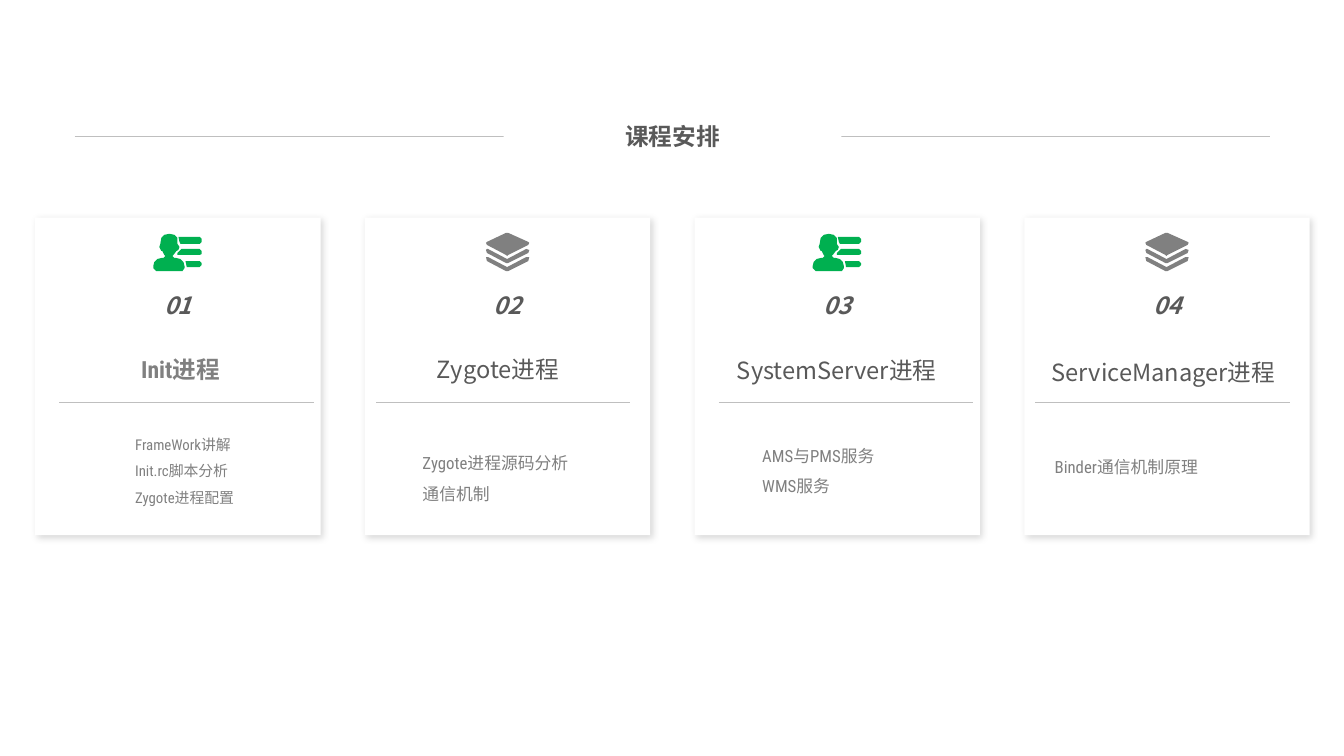
from lxml import etree
from pptx import Presentation
from pptx.dml.color import RGBColor
from pptx.enum.shapes import MSO_CONNECTOR, MSO_SHAPE
from pptx.enum.text import MSO_ANCHOR, MSO_AUTO_SIZE, PP_ALIGN
from pptx.oxml.ns import qn
from pptx.util import Inches, Pt

RECT = MSO_SHAPE.RECTANGLE
STRAIGHT = MSO_CONNECTOR.STRAIGHT
TOP, MIDDLE = MSO_ANCHOR.TOP, MSO_ANCHOR.MIDDLE
LEFT, CENTER = PP_ALIGN.LEFT, PP_ALIGN.CENTER
NO_FIT = MSO_AUTO_SIZE.NONE

SANS, CONDENSED = "Noto Sans CJK SC", "Roboto Condensed"
DARK, GRAY, RULE, GREEN, WHITE = "595959", "808080", "BFBFBF", "00B050", "FFFFFF"

PERSON = [
    [(32, 27), (46, 27), (48, 29), (48, 31), (46, 33), (33, 33), (33, 32)],
    [(28, 15), (46, 15), (48, 17), (48, 20), (46, 21), (24, 21), (24, 19)],
    [(25, 3), (46, 3), (48, 5), (48, 8), (46, 10), (27, 10), (26, 8)],
    [(16, 0), (21, 1), (24, 4), (24, 10), (26, 13), (25, 16), (23, 17),
     (20, 21), (19, 22), (21, 24), (23, 24), (27, 25), (30, 28), (31, 32),
     (31, 34), (29, 37), (3, 37), (0, 34), (0, 32), (1, 28), (4, 25),
     (8, 24), (10, 24), (12, 22), (11, 21), (9, 17), (8, 17), (6, 13),
     (7, 10), (8, 4), (11, 1)],
]
CHEVRON = [(1, 16), (2, 16), (21, 26), (40, 16), (43, 17), (42, 20),
           (22, 30), (21, 30.5), (20, 30), (1, 20), (0, 17)]
STACK = [
    [(x, y + 7.5) for x, y in CHEVRON],
    CHEVRON,
    [(20, 0), (22, 0), (42, 9), (43, 10), (42, 12), (22, 22), (21, 23),
     (20, 22), (1, 12), (0, 10), (1, 9)],
]
PERSON_STYLE = (PERSON, GREEN, 1.17, 0.16, 0.24)
STACK_STYLE = (STACK, GRAY, 1.2, 0.15, 0.11)

CARDS = [
    (PERSON_STYLE, "Init进程", (0.12, 1.29, 2.64), (CONDENSED, GRAY, True),
     ["FrameWork讲解", "Init.rc脚本分析", "Zygote进程配置"],
     (0.89, 2.02, 2.37, 0.9), 10.6, TOP, (0.1, 0.05)),
    (STACK_STYLE, "Zygote进程", (-0.19, 1.29, 3.02), (SANS, DARK, False),
     ["Zygote进程源码分析", "通信机制"],
     (0.52, 2.17, 3.02, 0.73), 12, MIDDLE, (0.05, 0.03)),
    (PERSON_STYLE, "SystemServer进程", (0.09, 1.3, 2.64), (SANS, DARK, False),
     ["AMS与PMS服务", "WMS服务"],
     (0.62, 1.95, 3.02, 1.02), 12, MIDDLE, (0.05, 0.03)),
    (STACK_STYLE, "ServiceManager进程", (0.06, 1.32, 2.64), (SANS, DARK, False),
     ["Binder通信机制原理"],
     (0.25, 2.21, 3.02, 0.42), 12, MIDDLE, (0.05, 0.03)),
]


def rgb(value):
    return RGBColor.from_string(value)


def paint(sp, color):
    sp.fill.solid()
    sp.fill.fore_color.rgb = rgb(color)


def place(sp, x, y, w, h):
    sp.left, sp.top, sp.width, sp.height = (Inches(v) for v in (x, y, w, h))


def bring_forward(sp):
    sp.element.getparent().append(sp.element)


def add_rule(s, x, y, w):
    line = s.shapes.add_connector(
        STRAIGHT, Inches(x), Inches(y), Inches(x + w), Inches(y))
    line.line.color.rgb = rgb(RULE)
    line.line.width = Pt(0.25)
    etree.SubElement(line.element.spPr, qn("a:effectLst"))


def add_icon(s, contours, color, x, y):
    first, *rest = contours
    fb = s.shapes.build_freeform(*first[0], scale=Inches(0.01))
    fb.add_line_segments(first[1:])
    for points in rest:
        fb.move_to(*points[0])
        fb.add_line_segments(points[1:])
    sp = fb.convert_to_shape(Inches(x), Inches(y))
    paint(sp, color)
    sp.line.fill.background()
    sp.shadow.inherit = False


def add_panel(s, x, y, w, h):
    sp = s.shapes.add_shape(RECT, Inches(x), Inches(y), Inches(w), Inches(h))
    paint(sp, WHITE)
    sp.line.fill.background()
    sp.shadow.inherit = False
    effects = sp.element.spPr.find(qn("a:effectLst"))
    shadow = etree.SubElement(
        effects, qn("a:outerShdw"), blurRad=str(Pt(5)), dist=str(Pt(2)),
        dir="2700000", algn="tl", rotWithShape="0")
    black = etree.SubElement(shadow, qn("a:srgbClr"), val="000000")
    etree.SubElement(black, qn("a:alpha"), val="15000")


def write(sp, lines, size, font, color, bold=False, italic=False,
          align=CENTER, spacing=1.0, anchor=MIDDLE, inset=(0.05, 0.03)):
    tf = sp.text_frame
    tf.word_wrap = True
    tf.auto_size = NO_FIT
    tf.vertical_anchor = anchor
    tf.margin_left = tf.margin_right = Inches(inset[0])
    tf.margin_top = tf.margin_bottom = Inches(inset[1])
    for i, text in enumerate(lines):
        p = tf.add_paragraph() if i else tf.paragraphs[0]
        p.alignment = align
        p.line_spacing = spacing
        p.space_before = p.space_after = Pt(0)
        pPr = p._p.get_or_add_pPr()
        pPr.set("marL", "0")
        pPr.set("indent", "0")
        etree.SubElement(pPr, qn("a:buNone"))
        r = p.add_run()
        r.text = text
        r.font.size = Pt(size)
        r.font.name = font
        r.font.bold = bold
        r.font.italic = italic
        r.font.color.rgb = rgb(color)
        etree.SubElement(r._r.get_or_add_rPr(), qn("a:ea"), typeface=SANS)


def add_label(s, text, x, y, w, h, font, color, bold, italic=False):
    sp = s.shapes.add_textbox(Inches(x), Inches(y), Inches(w), Inches(h))
    write(sp, [text], 16.9, font, color, bold, italic)


def add_header(s, x, y, w, h):
    add_rule(s, x, y + 0.36, w)
    title = s.shapes.title
    place(title, x + (w - 3.35) / 2, y, 3.35, h)
    paint(title, WHITE)
    write(title, ["课程安排"], 16.9, SANS, DARK, bold=True)
    bring_forward(title)


def add_card(s, number, card, body, x, y, w, h):
    style, heading, heading_box, heading_look, topics, box, size, anchor, inset = card
    contours, color, icon_x, icon_y, rule_x = style
    head_x, head_y, head_w = heading_box
    add_panel(s, x, y, w, h)
    add_icon(s, contours, color, x + icon_x, y + icon_y)
    add_rule(s, x + rule_x, y + 1.83, 2.52)
    add_label(s, f"{number:02}", x + 0.44, y + 0.63, 1.95, 0.48,
              SANS, DARK, True, True)
    add_label(s, heading, x + head_x, y + head_y, head_w, 0.42, *heading_look)
    place(body, x + box[0], y + box[1], *box[2:])
    write(body, topics, size, CONDENSED, GRAY, align=LEFT, spacing=1.5,
          anchor=anchor, inset=inset)
    bring_forward(body)


def main():
    prs = Presentation()
    prs.slide_width, prs.slide_height = Inches(13.33), Inches(7.5)
    s = prs.slides.add_slide(prs.slide_layouts.get_by_name("Comparison"))
    add_header(s, 0.74, 0.99, 11.86, 0.71)
    bodies = [s.placeholders[i] for i in range(1, 5)]
    for i, (card, body) in enumerate(zip(CARDS, bodies)):
        add_card(s, i + 1, card, body, 0.35 + 3.27 * i, 2.16, 2.83, 3.15)
    prs.save("out.pptx")


if __name__ == "__main__":
    main()
